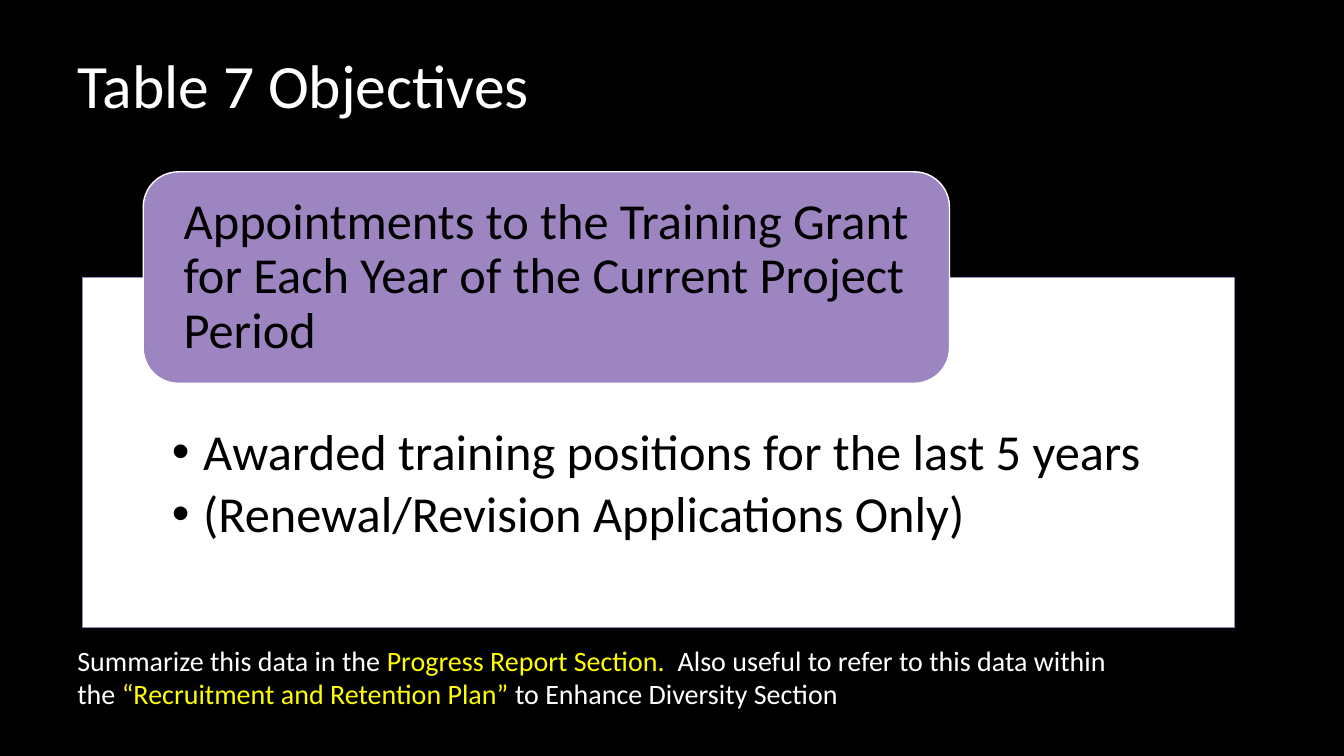
from lxml import etree
from pptx import Presentation
from pptx import util as u
from pptx.dml.color import RGBColor
from pptx.enum import shapes, text
from pptx.oxml.ns import qn

COLORS = {"black": "000000", "white": "FFFFFF", "purple": "9C85C0", "yellow": "FFFF00"}


class Deck:
    font = "Calibri"

    def __init__(self, prs):
        self.s = prs.slides.add_slide(prs.slide_layouts[1])
        self.paint(self.s.background.fill, "black")

    def paint(self, fill, color):
        fill.solid()
        fill.fore_color.rgb = RGBColor.from_string(COLORS[color])

    def place(self, sp, box):
        sp.left, sp.top, sp.width, sp.height = map(u.Cm, box)

    def outline(self, sp, fill, line):
        self.paint(sp.fill, fill)
        self.paint(sp.line.fill, line)
        sp.line.width = u.Pt(1)

    def frame(self, sp, insets, anchor):
        tf = sp.text_frame
        tf.word_wrap = True
        tf.auto_size = text.MSO_AUTO_SIZE.NONE
        tf.vertical_anchor = anchor
        tf.margin_left, tf.margin_top, tf.margin_right, tf.margin_bottom = map(u.Cm, insets)
        return tf

    def add_runs(self, p, runs, size, spacing=0.9, after=0):
        p.alignment = text.PP_ALIGN.LEFT
        p.line_spacing = spacing
        p.space_before = u.Pt(0)
        p.space_after = u.Pt(after)
        for words, color in runs:
            r = p.add_run()
            r.text = words
            r.font.name = self.font
            r.font.size = u.Pt(size)
            self.paint(r.font.fill, color)

    def title(self, words, box):
        sp = self.s.shapes.title
        self.place(sp, box)
        tf = self.frame(sp, (0.25, 0.13, 0.25, 0.13), text.MSO_ANCHOR.MIDDLE)
        self.add_runs(tf.paragraphs[0], [(words, "white")], 44)

    def bullets(self, items, box):
        sp = self.s.placeholders[1]
        self.place(sp, box)
        self.outline(sp, "white", "purple")
        tf = self.frame(sp, (2.25, 3.76, 2.25, 0.71), text.MSO_ANCHOR.TOP)
        for i, item in enumerate(items):
            p = tf.add_paragraph() if i else tf.paragraphs[0]
            pPr = p._p.get_or_add_pPr()
            pPr.set("marL", str(u.Cm(0.79)))
            pPr.set("indent", str(u.Cm(-0.79)))
            etree.SubElement(pPr, qn("a:buChar")).set("char", "•")
            self.add_runs(p, [(item, "black")], 36, after=5.4)

    def label(self, words, box):
        sp = self.s.shapes.add_shape(shapes.MSO_SHAPE.ROUNDED_RECTANGLE, *map(u.Cm, box))
        sp.shadow.inherit = False
        self.outline(sp, "purple", "white")
        tf = self.frame(sp, (0.76, 0, 0.76, 0), text.MSO_ANCHOR.MIDDLE)
        self.add_runs(tf.paragraphs[0], [(words, "black")], 36)

    def note(self, runs, box):
        sp = self.s.shapes.add_textbox(*map(u.Cm, box))
        tf = self.frame(sp, (0.25, 0.13, 0.25, 0.13), text.MSO_ANCHOR.TOP)
        self.add_runs(tf.paragraphs[0], runs, 20, spacing=1.0)


def main():
    prs = Presentation()
    prs.slide_width, prs.slide_height = u.Cm(33.87), u.Cm(19.05)
    deck = Deck(prs)
    deck.title("Table 7 Objectives", (1.7, 0.89, 30.48, 2.67))
    deck.bullets(
        ["Awarded training positions for the last 5 years",
         "(Renewal/Revision Applications Only)"],
        (2.08, 6.99, 29.03, 8.82))
    deck.label(
        "Appointments to the Training Grant for Each Year of the Current Project Period",
        (3.61, 4.33, 20.32, 5.33))
    deck.note(
        [("Summarize this data in the ", "white"),
         ("Progress Report Section.  ", "yellow"),
         ("Also useful to refer to this data within the ", "white"),
         ("“Recruitment and Retention Plan” ", "yellow"),
         ("to Enhance Diversity Section", "white")],
        (1.7, 16.08, 26.87, 1.96))
    prs.save("out.pptx")


if __name__ == "__main__":
    main()
